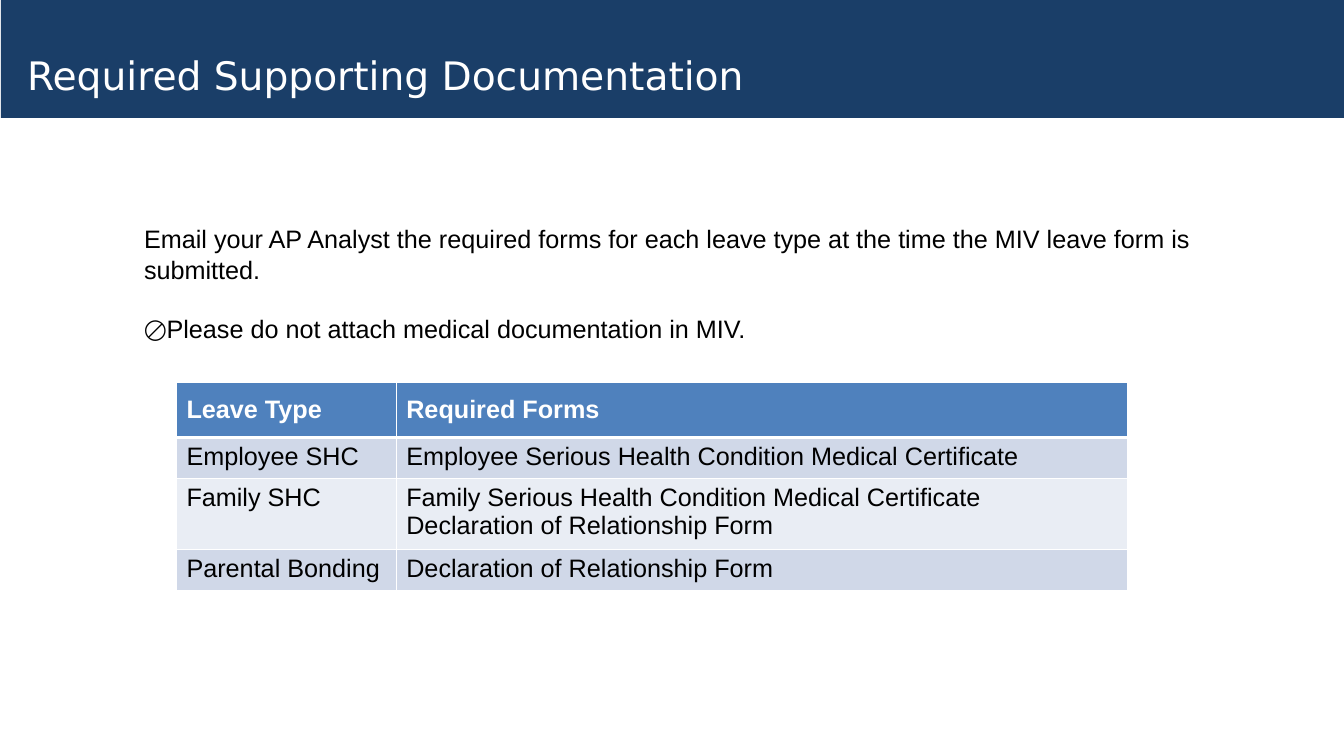
from lxml import etree
from pptx import Presentation
from pptx.dml.color import RGBColor
from pptx.enum.shapes import MSO_SHAPE
from pptx.enum.text import MSO_ANCHOR, PP_ALIGN
from pptx.oxml.ns import qn
from pptx.util import Inches, Pt

RECT = MSO_SHAPE.RECTANGLE
TOP, MIDDLE = MSO_ANCHOR.TOP, MSO_ANCHOR.MIDDLE
LEFT = PP_ALIGN.LEFT

NAVY = RGBColor(0x1A, 0x3E, 0x68)
BLUE = RGBColor(0x4F, 0x81, 0xBD)
BAND_DARK = RGBColor(0xD0, 0xD8, 0xE8)
BAND_LIGHT = RGBColor(0xE9, 0xED, 0xF4)
WHITE = RGBColor(0xFF, 0xFF, 0xFF)
BLACK = RGBColor(0x00, 0x00, 0x00)

LEAVE_FORMS = [
    ("Leave Type", "Required Forms"),
    ("Employee SHC", "Employee Serious Health Condition Medical Certificate"),
    ("Family SHC", "Family Serious Health Condition Medical Certificate\n"
                   "Declaration of Relationship Form"),
    ("Parental Bonding", "Declaration of Relationship Form"),
]


class SlideBuilder:
    title_font, body_font = "DejaVu Sans", "Arial"
    title_size, body_size = Pt(28), Pt(18)

    def __init__(self, prs):
        self.slide = prs.slides.add_slide(prs.slide_layouts[5])

    def format_text(self, tf, font, size, color, bold=False):
        for p in tf.paragraphs:
            p.alignment = LEFT
            for r in p.runs:
                r.font.name, r.font.size = font, size
                r.font.color.rgb, r.font.bold = color, bold

    def band(self, x, y, w, h, color):
        sp = self.slide.shapes.add_shape(RECT, Inches(x), Inches(y), Inches(w), Inches(h))
        sp.shadow.inherit = False
        sp.fill.solid()
        sp.fill.fore_color.rgb = color
        sp.line.fill.background()
        # Send behind the title
        self.slide.shapes._spTree.insert(2, sp._element)

    def title(self, text, x, y, w, h):
        sp = self.slide.shapes.title
        sp.left, sp.top, sp.width, sp.height = Inches(x), Inches(y), Inches(w), Inches(h)
        tf = sp.text_frame
        tf.text = text
        tf.word_wrap, tf.vertical_anchor = True, TOP
        self.format_text(tf, self.title_font, self.title_size, WHITE)

    def text(self, text, x, y, w, h, gap):
        sp = self.slide.shapes.add_textbox(Inches(x), Inches(y), Inches(w), Inches(h))
        tf = sp.text_frame
        tf.text = text
        tf.word_wrap = True
        for p in tf.paragraphs[1:]:
            p.space_before = gap
        self.format_text(tf, self.body_font, self.body_size, BLACK)

    def cell_borders(self, cell, bottom):
        tc_pr = cell._tc.get_or_add_tcPr()
        for side, width in (("L", 1), ("R", 1), ("T", 1), ("B", bottom)):
            ln = etree.SubElement(tc_pr, qn(f"a:ln{side}"), w=str(Pt(width)))
            fill = etree.SubElement(ln, qn("a:solidFill"))
            etree.SubElement(fill, qn("a:srgbClr"), val=str(WHITE))

    def table(self, rows, x, y, col_widths, row_heights):
        frame = self.slide.shapes.add_table(
            len(rows), len(col_widths), Inches(x), Inches(y),
            Inches(sum(col_widths)), Inches(sum(row_heights)))
        table = frame.table
        for column, width in zip(table.columns, col_widths):
            column.width = Inches(width)
        for i, (values, height) in enumerate(zip(rows, row_heights)):
            header = i == 0
            table.rows[i].height = Inches(height)
            for j, value in enumerate(values):
                cell = table.cell(i, j)
                cell.text_frame.text = value
                cell.vertical_anchor = MIDDLE if header else TOP
                self.cell_borders(cell, 3 if header or i == 1 and False else 1)
                cell.fill.solid()
                cell.fill.fore_color.rgb = (
                    BLUE if header else BAND_DARK if i % 2 else BAND_LIGHT)
                self.format_text(cell.text_frame, self.body_font, self.body_size,
                                 WHITE if header else BLACK, header)


def main():
    prs = Presentation()
    prs.slide_width, prs.slide_height = Inches(13.33), Inches(7.5)
    s = SlideBuilder(prs)

    # Header
    s.band(0.01, -0.02, 13.33, 1.19, NAVY)
    s.title("Required Supporting Documentation", 0.17, 0.46, 10.92, 0.57)

    # Instructions
    s.text("Email your AP Analyst the required forms for each leave type "
           "at the time the MIV leave form is submitted.\n"
           "🚫Please do not attach medical documentation in MIV.",
           1.33, 2.17, 11.25, 1.55, gap=Pt(21))

    # Forms needed for each leave type
    s.table(LEAVE_FORMS, 1.75, 3.79, (2.18, 7.25), (0.55, 0.41, 0.7, 0.41))

    prs.save("out.pptx")


if __name__ == "__main__":
    main()
